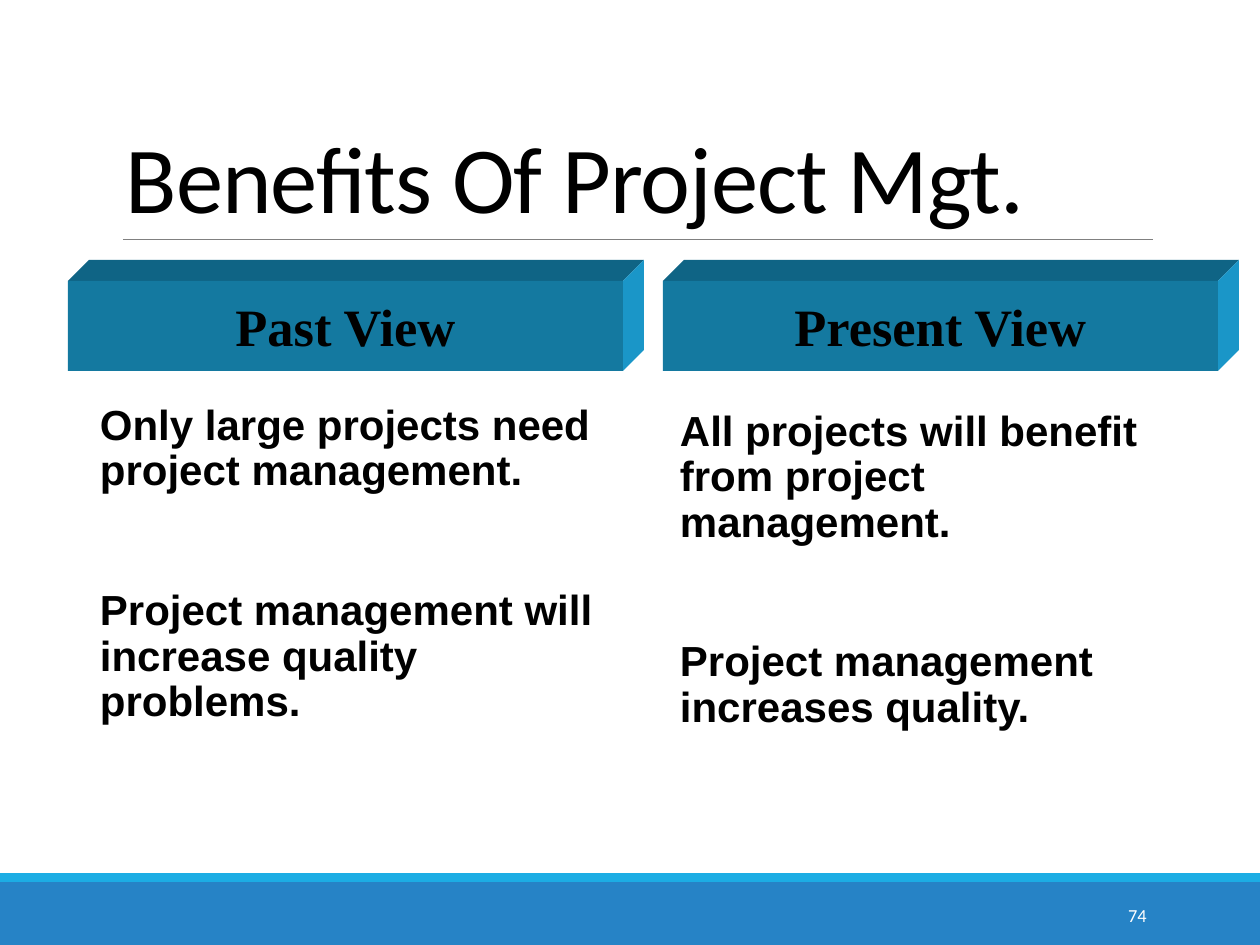
from dataclasses import dataclass
from lxml.etree import SubElement
from pptx import Presentation
from pptx.dml.color import RGBColor
from pptx.enum.shapes import MSO_CONNECTOR, MSO_SHAPE
from pptx.enum.text import MSO_ANCHOR, MSO_AUTO_SIZE, PP_ALIGN
from pptx.oxml.ns import qn
from pptx.util import Pt

EMU_PER_PX = 914400 / 126


@dataclass(frozen=True)
class Theme:
    black: str = "000000"
    white: str = "FFFFFF"
    rule: str = "808080"
    footer: str = "2683C6"
    accent: str = "1CADE4"
    front: str = "1479A0"
    top: str = "0F6485"
    side: str = "1A96C8"
    title_size: float = 54
    heading_size: float = 30
    body_size: float = 24
    number_size: float = 10.5


THEME = Theme()


def px(n):
    return round(n * EMU_PER_PX)


def box(*values):
    return [px(v) for v in values]


def apply(obj, formats):
    for name, value in formats.items():
        setattr(obj, name, value)


def paint(sp, color):
    sp.shadow.inherit = False
    sp.fill.solid()
    sp.fill.fore_color.rgb = RGBColor.from_string(color)
    sp.line.fill.background()


def write(tf, paragraphs, font, color, frame, para):
    apply(tf, {"auto_size": MSO_AUTO_SIZE.NONE, **frame})
    for i, text in enumerate(paragraphs):
        p = tf.paragraphs[0] if i == 0 else tf.add_paragraph()
        apply(p, para)
        if i == 0:
            p.space_before = Pt(0)
        r = p.add_run()
        r.text = text
        apply(r.font, font)
        r.font.color.rgb = RGBColor.from_string(color)


def add_rect(slide, bounds, color):
    sp = slide.shapes.add_shape(MSO_SHAPE.RECTANGLE, *box(*bounds))
    paint(sp, color)
    return sp


def add_face(slide, points, color):
    builder = slide.shapes.build_freeform(*points[0], scale=EMU_PER_PX)
    builder.add_line_segments(points[1:], close=True)
    paint(builder.convert_to_shape(), color)


def add_rule(slide, x1, x2, y):
    line = slide.shapes.add_connector(MSO_CONNECTOR.STRAIGHT, *box(x1, y, x2, y))
    line.line.color.rgb = RGBColor.from_string(THEME.rule)
    line.line.width = Pt(0.5)
    SubElement(line._element.spPr, qn("a:effectLst"))


def add_title(slide, text):
    sp = slide.shapes.title
    apply(sp, dict(zip(("left", "top", "width", "height"), box(113, 39, 1040, 200))))
    write(sp.text_frame, [text],
          {"name": "Calibri", "size": Pt(THEME.title_size)}, THEME.black,
          {"vertical_anchor": MSO_ANCHOR.BOTTOM, "word_wrap": True},
          {"alignment": PP_ALIGN.LEFT, "line_spacing": 0.85})
    sp.text_frame.paragraphs[0].runs[0].font._element.set("spc", "-50")


def add_block_heading(slide, left, text):
    top, width, height, depth = 281, 555, 90, 21
    right, bottom = left + width, top + height
    add_face(slide, [(left, top), (left + depth, top - depth),
                     (right + depth, top - depth), (right, top)], THEME.top)
    add_face(slide, [(right, top), (right + depth, top - depth),
                     (right + depth, bottom - depth), (right, bottom)], THEME.side)
    sp = add_rect(slide, (left, top, width, height), THEME.front)
    write(sp.text_frame, [text],
          {"name": "Times New Roman", "size": Pt(THEME.heading_size), "bold": True},
          THEME.black,
          {"vertical_anchor": MSO_ANCHOR.MIDDLE, "word_wrap": False},
          {"alignment": PP_ALIGN.CENTER})


def add_body(slide, bounds, paragraphs):
    sp = slide.shapes.add_textbox(*box(*bounds))
    write(sp.text_frame, paragraphs,
          {"name": "Arial", "size": Pt(THEME.body_size), "bold": True}, THEME.black,
          {"word_wrap": True, "margin_left": px(13), "margin_right": 0},
          {"line_spacing": 0.9, "space_before": Pt(52), "space_after": Pt(2)})


def add_number(slide, text):
    sp = slide.shapes.add_textbox(*box(1023, 890, 136, 50))
    write(sp.text_frame, [text],
          {"name": "Calibri", "size": Pt(THEME.number_size)}, THEME.white,
          {"vertical_anchor": MSO_ANCHOR.MIDDLE, "word_wrap": True},
          {"alignment": PP_ALIGN.RIGHT})


def main():
    prs = Presentation()
    apply(prs, {"slide_width": px(1260), "slide_height": px(945)})
    slide = prs.slides.add_slide(prs.slide_layouts[5])
    add_rect(slide, (0, 882, 1260, 63), THEME.footer)
    add_rect(slide, (0, 873, 1260, 9), THEME.accent)
    add_rule(slide, 123, 1153, 239)
    add_title(slide, "Benefits Of Project Mgt.")
    columns = [
        (68, "Past View", (87, 398, 507, 437),
         ["Only large projects need project management.",
          "Project management will increase quality problems."]),
        (663, "Present View", (667, 404, 519, 431),
         ["All projects will benefit from project management.",
          "Project management increases quality."]),
    ]
    for left, heading, bounds, paragraphs in columns:
        add_block_heading(slide, left, heading)
        add_body(slide, bounds, paragraphs)
    add_number(slide, "74")
    prs.save("out.pptx")


if __name__ == "__main__":
    main()
